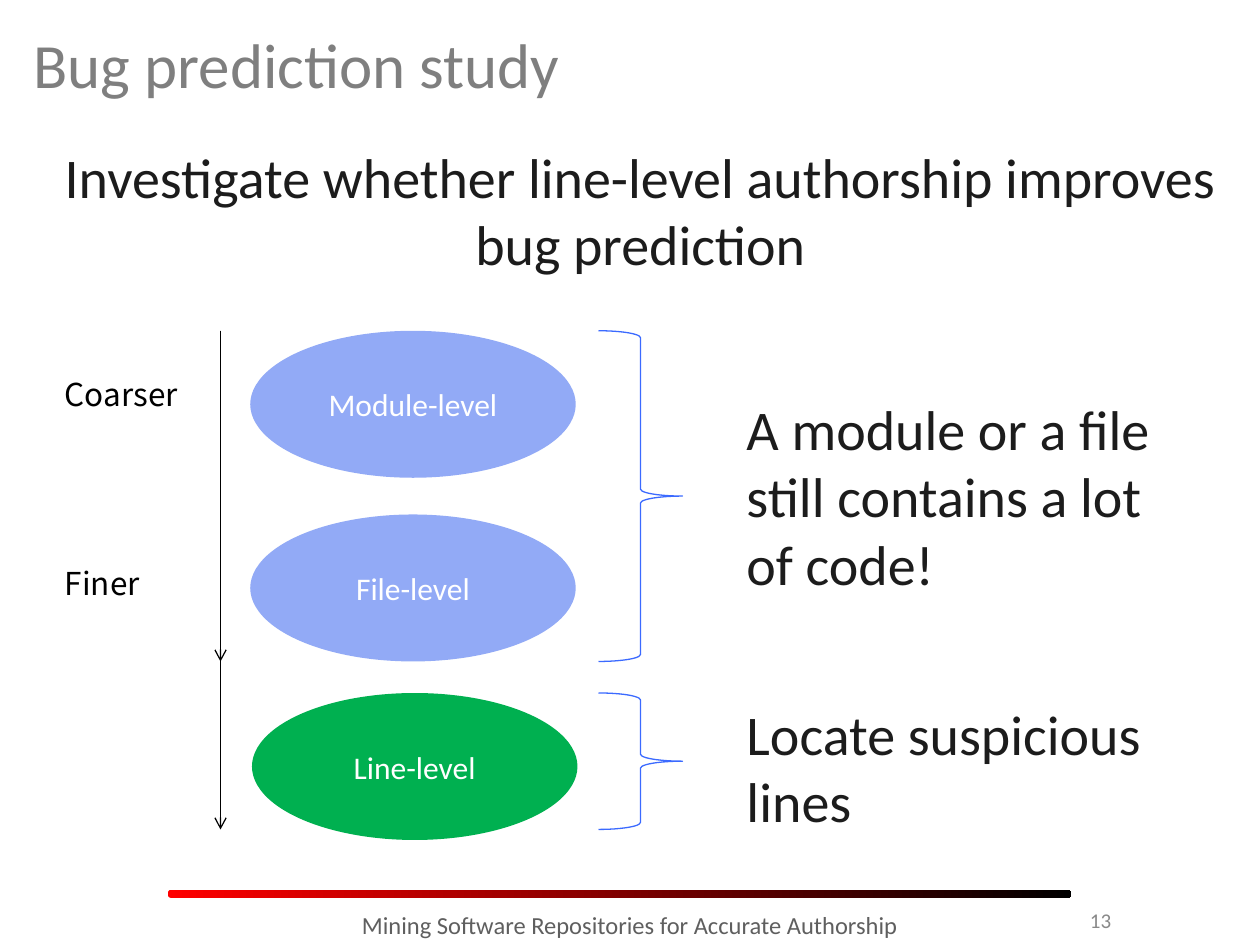
from lxml.etree import SubElement
from pptx import Presentation
from pptx.dml.color import RGBColor
from pptx.enum.shapes import MSO_CONNECTOR, MSO_SHAPE
from pptx.enum.text import MSO_ANCHOR, PP_ALIGN
from pptx.oxml.ns import qn
from pptx.util import Pt

DARK, WHITE, BLACK = "1C1C1C", "FFFFFF", "000000"
PERIWINKLE, GREEN, BRACE_BLUE = "92AAF6", "00B050", "3B6AFF"


def color(hex_string):
    """Turn a hex string into a colour."""
    return RGBColor.from_string(hex_string)


def write(shape, text, size, font_color, align=PP_ALIGN.LEFT,
          anchor=MSO_ANCHOR.TOP, font_name="Calibri"):
    """Put one formatted paragraph into a shape."""
    frame = shape.text_frame
    frame.word_wrap = True
    frame.vertical_anchor = anchor
    frame.text = text
    paragraph = frame.paragraphs[0]
    paragraph.alignment = align
    font = paragraph.runs[0].font
    font.name, font.size = font_name, Pt(size)
    font.color.rgb = color(font_color)


def add_text(slide, box, text, size, font_color, **options):
    """Add a wrapping text box."""
    shape = slide.shapes.add_textbox(*map(Pt, box))
    write(shape, text, size, font_color, **options)


def add_preset(slide, preset, box):
    """Add a preset shape without a shadow."""
    shape = slide.shapes.add_shape(preset, *map(Pt, box))
    shape.shadow.inherit = False
    return shape


def add_level(slide, box, text, fill):
    """Add an ellipse naming one level of granularity."""
    ellipse = add_preset(slide, MSO_SHAPE.OVAL, box)
    ellipse.fill.solid()
    ellipse.fill.fore_color.rgb = color(fill)
    ellipse.line.fill.background()
    write(ellipse, text, 18, WHITE, align=PP_ALIGN.CENTER, anchor=MSO_ANCHOR.MIDDLE)


def add_brace(slide, box):
    """Add an outlined right brace."""
    brace = add_preset(slide, MSO_SHAPE.RIGHT_BRACE, box)
    brace.fill.background()
    brace.line.color.rgb = color(BRACE_BLUE)
    brace.line.width = Pt(0.75)


def add_down_arrow(slide, left, top, length):
    """Add a thin vertical line with an open arrowhead at its foot."""
    arrow = slide.shapes.add_connector(
        MSO_CONNECTOR.STRAIGHT, Pt(left), Pt(top), Pt(left), Pt(top + length))
    arrow.line.color.rgb = color(BLACK)
    arrow.line.width = Pt(0.75)
    SubElement(arrow.line._get_or_add_ln(), qn("a:tailEnd"), type="arrow")
    SubElement(arrow._element.spPr, qn("a:effectLst"))


def add_footer(slide, left, top, width):
    """Add the gradient rule, the footer text and the slide number."""
    rule = add_preset(slide, MSO_SHAPE.ROUNDED_RECTANGLE, (left, top, width, 4.5))
    rule.adjustments[0] = 0.33
    rule.fill.gradient()
    rule.fill.gradient_angle = 0
    for stop, (position, stop_color) in zip(
            rule.fill.gradient_stops, ((0, "FF0000"), (1, BLACK))):
        stop.position = position
        stop.color.rgb = color(stop_color)
    rule.line.fill.background()
    add_text(slide, (left + 450, top + 3, 96, 28.8), "13", 12, "898989",
             align=PP_ALIGN.RIGHT, anchor=MSO_ANCHOR.MIDDLE)
    add_text(slide, (left + 78, top + 8, 372, 28.8),
             "Mining Software Repositories for Accurate Authorship", 14, "5F5F5F",
             align=PP_ALIGN.CENTER)


def add_granularity(slide, left, top):
    """Add the scale from coarser to finer beside the three levels."""
    for offset, text in ((22, "Coarser"), (130, "Finer")):
        add_text(slide, (left, top + offset, 84, 28.8), text, 18, BLACK,
                 font_name="Noto Sans CJK JP")
    for length in (189, 285):
        add_down_arrow(slide, left + 96, top, length)
    levels = ((113, 0, "Module-level", PERIWINKLE),
              (113, 105, "File-level", PERIWINKLE),
              (114, 207, "Line-level", GREEN))
    for across, down, text, fill in levels:
        add_level(slide, (left + across, top + down, 186, 84), text, fill)


def add_remarks(slide, left, top):
    """Add the braces and the remark that each one points to."""
    remarks = (
        (0, 189, 33, 114, "A module or a file still contains a lot of code!"),
        (207, 78, 207, 90, "Locate suspicious lines"),
    )
    for brace_top, brace_height, text_top, text_height, text in remarks:
        add_brace(slide, (left, top + brace_top, 48, brace_height))
        add_text(slide, (left + 77.5, top + text_top, 258, text_height), text, 32, DARK)


def build():
    """Build and save the slide."""
    presentation = Presentation()
    presentation.slide_width, presentation.slide_height = Pt(720), Pt(540)
    slide = presentation.slides.add_slide(presentation.slide_layouts[6])
    add_footer(slide, 96, 508.5, 516)
    add_text(slide, (12, 6, 696, 60), "Bug prediction study", 36, "7F7F7F",
             anchor=MSO_ANCHOR.MIDDLE)
    add_text(slide, (21, 78, 690, 96),
             "Investigate whether line-level authorship improves bug prediction",
             32, DARK, align=PP_ALIGN.CENTER)
    add_granularity(slide, 30, 189)
    add_remarks(slide, 342, 189)
    presentation.save("out.pptx")


if __name__ == "__main__":
    build()
